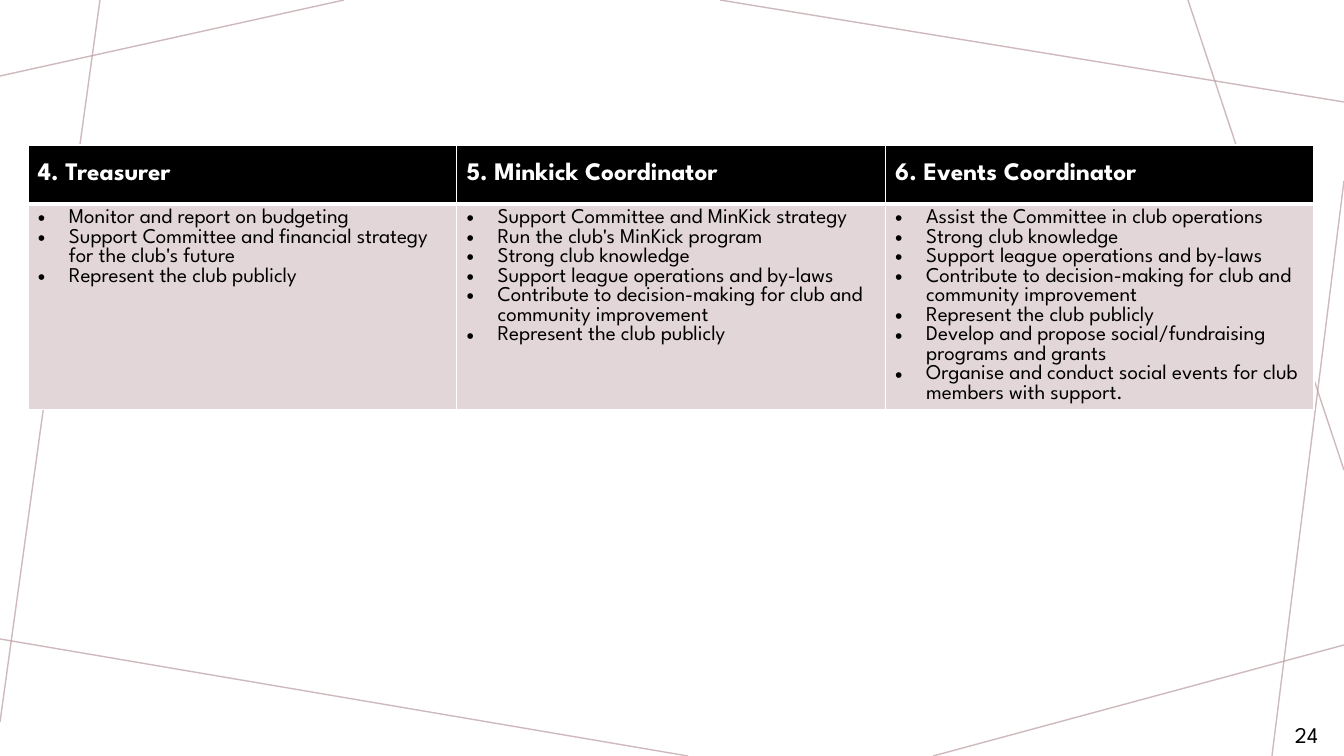
from pptx import Presentation
from pptx import util as u
from pptx.dml.color import RGBColor
from pptx.enum import shapes, text
from pptx.oxml.ns import qn
from lxml import etree

EMU_PER_PX = u.Inches(1) / 100.8
PAGE_W, PAGE_H = 1344, 756
FONT = "League Spartan"
COLOURS = {
    "ink": "000000",
    "paper": "FFFFFF",
    "panel": "E3D6D8",
    "thread": "BA9CA0",
}

# Background lines: start and end points in px
THREADS = [
    ((344, 0), (0, 76)),
    ((100, 0), (0, 722)),
    ((688, 756), (0, 639)),
    ((1344, 645), (933, 756)),
    ((1344, 181), (1272, 756)),
    ((1344, 470), (1188, 0)),
    ((1344, 102), (720, 0)),
]

ROLES = [
    ("4. Treasurer", [
        "Monitor and report on budgeting",
        "Support Committee and financial strategy for the club's future",
        "Represent the club publicly",
    ]),
    ("5. Minkick Coordinator", [
        "Support Committee and MinKick strategy",
        "Run the club's MinKick program",
        "Strong club knowledge",
        "Support league operations and by-laws",
        "Contribute to decision-making for club and community improvement",
        "Represent the club publicly",
    ]),
    ("6. Events Coordinator", [
        "Assist the Committee in club operations",
        "Strong club knowledge",
        "Support league operations and by-laws",
        "Contribute to decision-making for club and community improvement",
        "Represent the club publicly",
        "Develop and propose social/fundraising programs and grants",
        "Organise and conduct social events for club members with support.",
    ]),
]


def px(length):
    return u.Emu(round(length * EMU_PER_PX))


def rgb(name):
    return RGBColor.from_string(COLOURS[name])


def add_node(parent, tag, **attributes):
    node = etree.SubElement(parent, qn(tag))
    for key, value in attributes.items():
        node.set(key, str(value))
    return node


def write(para, words, size=15, colour="ink", bold=False, bullet=False):
    span = para.add_run()
    span.text = words
    span.font.name = FONT
    span.font.size = u.Pt(size)
    span.font.bold = bold
    span.font.color.rgb = rgb(colour)
    if bullet:
        props = para._p.get_or_add_pPr()
        props.set("marL", str(px(31)))
        props.set("indent", str(-px(31)))
        add_node(add_node(props, "a:buClr"), "a:srgbClr", val=COLOURS[colour])
        add_node(props, "a:buFont", typeface="Arial")
        add_node(props, "a:buChar", char="•")


def set_margins(holder):
    holder.margin_left = holder.margin_right = px(10)
    holder.margin_top = holder.margin_bottom = px(5)


def style_cell(cell, fill, bottom):
    set_margins(cell)
    props = cell._tc.get_or_add_tcPr()
    for side, width in (("L", 1), ("R", 1), ("T", 1), ("B", bottom)):
        edge = add_node(props, "a:ln" + side, w=u.Pt(width))
        add_node(add_node(edge, "a:solidFill"), "a:srgbClr", val=COLOURS["paper"])
    cell.fill.solid()
    cell.fill.fore_color.rgb = rgb(fill)


def draw_threads(page):
    for start, end in THREADS:
        thread = page.shapes.add_connector(
            shapes.MSO_CONNECTOR.STRAIGHT, *map(px, start + end))
        thread.line.width = u.Pt(1)
        thread.line.color.rgb = rgb("thread")
        props = thread._element.spPr
        colour = next(props.iter(qn("a:srgbClr")))
        add_node(colour, "a:alpha", val=70000)
        add_node(props, "a:effectLst")


def draw_roles(page, left, top, width, header_height, body_height):
    frame = page.shapes.add_table(
        2, len(ROLES), px(left), px(top), px(width), px(header_height + body_height))
    table = frame.table
    table.horz_banding = False
    table.rows[0].height = px(header_height)
    table.rows[1].height = px(body_height)
    for column, (title, duties) in enumerate(ROLES):
        table.columns[column].width = px(width / len(ROLES))

        # Role heading
        header = table.cell(0, column)
        style_cell(header, "ink", bottom=3)
        header.vertical_anchor = text.MSO_ANCHOR.MIDDLE
        write(header.text_frame.paragraphs[0], title, size=18, colour="paper", bold=True)

        # Duties
        body = table.cell(1, column)
        style_cell(body, "panel", bottom=1)
        for index, duty in enumerate(duties):
            frame_text = body.text_frame
            para = frame_text.add_paragraph() if index else frame_text.paragraphs[0]
            write(para, duty, bullet=True)


def draw_page_number(page, left, top, width, height):
    box = page.shapes.add_textbox(px(left), px(top), px(width), px(height))
    frame = box.text_frame
    frame.word_wrap = True
    frame.vertical_anchor = text.MSO_ANCHOR.MIDDLE
    set_margins(frame)
    write(frame.paragraphs[0], "24", size=16)


def main():
    deck = Presentation()
    deck.slide_width, deck.slide_height = px(PAGE_W), px(PAGE_H)
    page = deck.slides.add_slide(deck.slide_layouts[6])
    page.background.fill.solid()
    page.background.fill.fore_color.rgb = rgb("paper")
    draw_threads(page)
    draw_roles(page, left=28, top=145, width=1286, header_height=59, body_height=205)
    draw_page_number(page, left=1285, top=715, width=59, height=40)
    deck.save("out.pptx")


if __name__ == "__main__":
    main()
